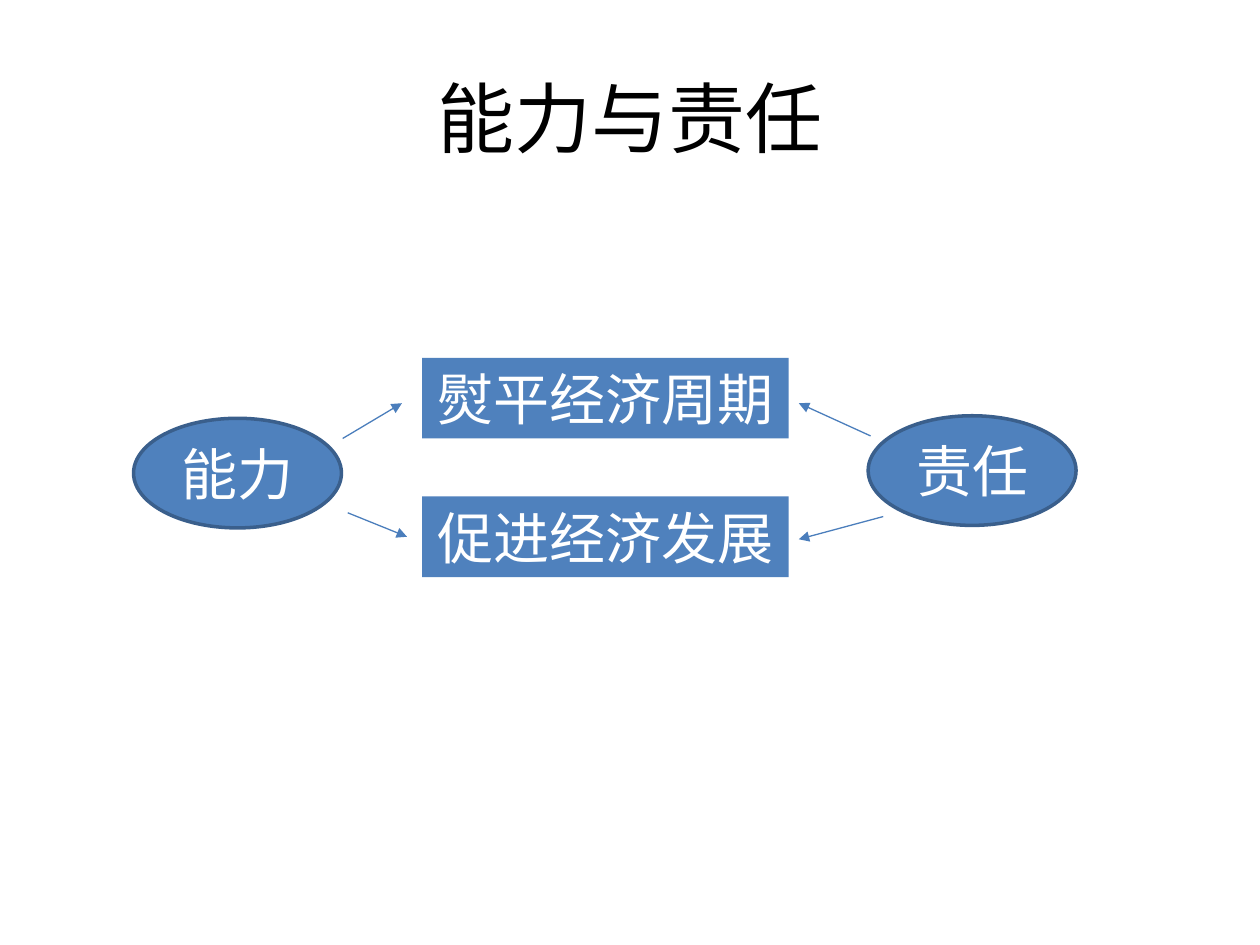
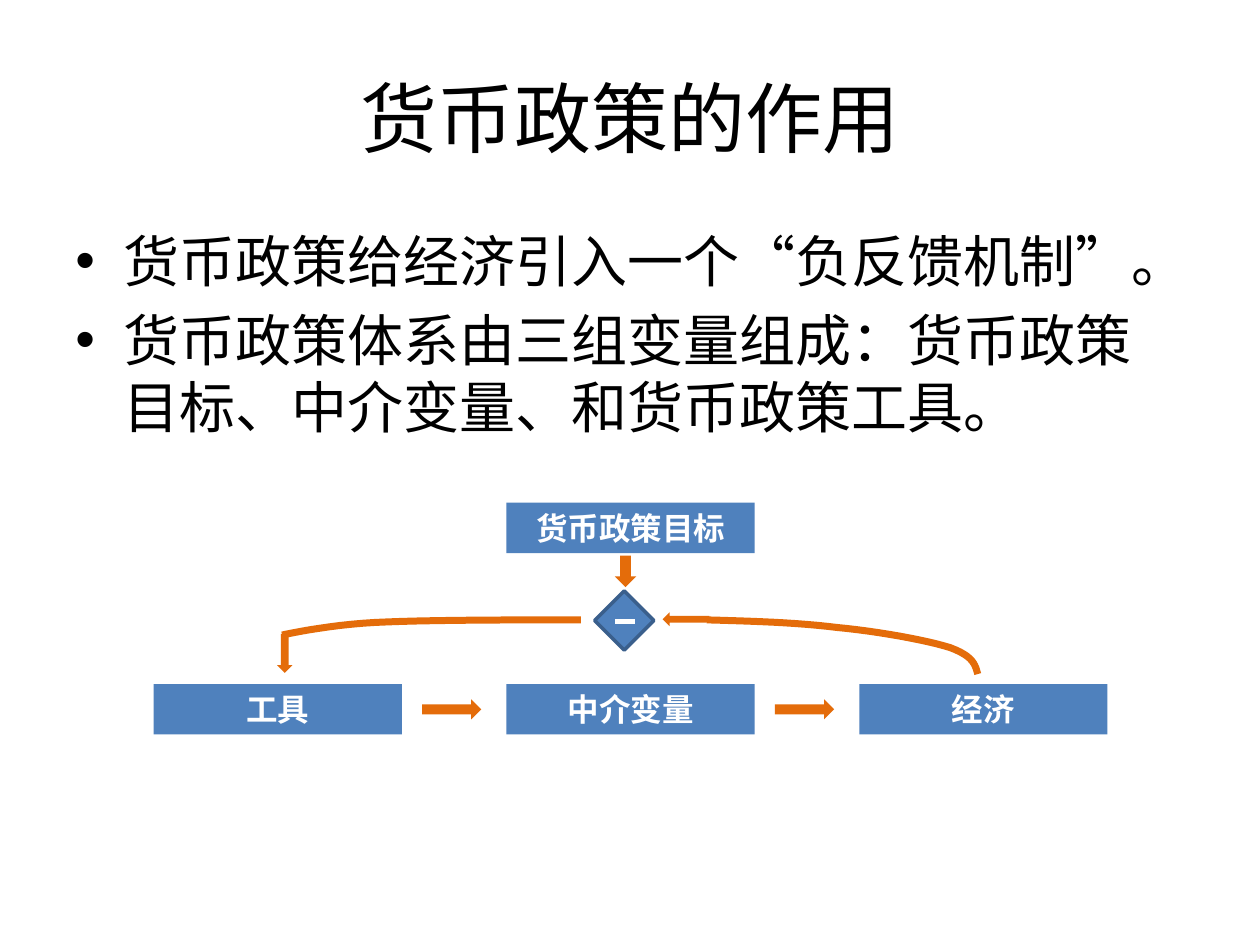
from dataclasses import dataclass

from lxml import etree
from pptx import Presentation
from pptx import util as u
from pptx.dml.color import RGBColor
from pptx.enum import lang, shapes, text
from pptx.oxml import ns

SHAPE = shapes.MSO_SHAPE
CENTER = text.PP_ALIGN.CENTER


@dataclass(frozen=True)
class Theme:
    font: str = "Calibri"
    ink: str = "000000"
    paper: str = "FFFFFF"
    blue: str = "4F81BD"
    blue_edge: str = "3A5F8C"
    blue_arrow: str = "4B7EBC"
    orange: str = "E46C0A"
    title: int = 44
    body: int = 32
    label: int = 18
    edge: float = 2
    thin: float = 0.75
    minus: float = 3
    feedback: float = 4


def inches(*values):
    return [u.Inches(value) for value in values]


def bezier(points, steps=12):
    """Points along chained cubic curves: start, then two controls and an end each."""
    track = [points[0]]
    for i in range(0, len(points) - 1, 3):
        a, b, c, d = points[i:i + 4]
        for step in range(1, steps + 1):
            t = step / steps
            s = 1 - t
            track.append(tuple(
                s**3 * a[k] + 3 * s * s * t * b[k] + 3 * s * t * t * c[k] + t**3 * d[k]
                for k in (0, 1)))
    return track


class Deck:
    def __init__(self, theme):
        self.theme = theme
        self.prs = Presentation()
        self.prs.slide_width, self.prs.slide_height = inches(10, 7.5)
        self.slide = None

    def new_slide(self, title):
        self.slide = self.prs.slides.add_slide(self.prs.slide_layouts[5])
        heading = self.slide.shapes.title
        heading.left, heading.top, heading.width, heading.height = inches(0.5, 0.3, 9, 1.25)
        heading.text_frame.vertical_anchor = text.MSO_ANCHOR.MIDDLE
        paragraph = heading.text_frame.paragraphs[0]
        paragraph.alignment = CENTER
        self.add_words(paragraph, title, self.theme.title, self.theme.ink)

    def add_words(self, paragraph, words, size, color, bold=False):
        run = paragraph.add_run()
        run.text = words
        run.font.name = self.theme.font
        run.font.size = u.Pt(size)
        run.font.bold = bold
        run.font.color.rgb = RGBColor.from_string(color)
        run.font.language_id = lang.MSO_LANGUAGE_ID.SIMPLIFIED_CHINESE

    def stroke(self, line, color, width):
        line.color.rgb = RGBColor.from_string(color)
        line.width = u.Pt(width)

    def bullets(self, box, items):
        frame = self.slide.shapes.add_textbox(*inches(*box)).text_frame
        frame.word_wrap = True
        for i, item in enumerate(items):
            paragraph = frame.add_paragraph() if i else frame.paragraphs[0]
            properties = paragraph._p.get_or_add_pPr()
            properties.set("marL", str(u.Inches(0.38)))
            properties.set("indent", str(u.Inches(-0.38)))
            etree.SubElement(properties, ns.qn("a:buFont")).set("typeface", "Arial")
            etree.SubElement(properties, ns.qn("a:buChar")).set("char", "•")
            if i:
                paragraph.space_before = u.Pt(0.2 * self.theme.body)
            self.add_words(paragraph, item, self.theme.body, self.theme.ink)

    def block(self, kind, box, fill, edge=False):
        block = self.slide.shapes.add_shape(kind, *inches(*box))
        block.shadow.inherit = False
        block.fill.solid()
        block.fill.fore_color.rgb = RGBColor.from_string(fill)
        if edge:
            self.stroke(block.line, self.theme.blue_edge, self.theme.edge)
        else:
            block.line.fill.background()
        return block

    def labelled(self, kind, box, words, size, bold=False, edge=False):
        frame = self.block(kind, box, self.theme.blue, edge).text_frame
        frame.word_wrap = False
        frame.vertical_anchor = text.MSO_ANCHOR.MIDDLE
        frame.paragraphs[0].alignment = CENTER
        self.add_words(frame.paragraphs[0], words, size, self.theme.paper, bold)

    def line(self, start, end, color, width, arrow=False):
        line = self.slide.shapes.add_connector(
            shapes.MSO_CONNECTOR.STRAIGHT, *inches(*start, *end))
        self.stroke(line.line, color, width)
        if arrow:
            etree.SubElement(line.line._get_or_add_ln(), ns.qn("a:tailEnd")).set("type", "triangle")
        etree.SubElement(line._element.spPr, ns.qn("a:effectLst"))

    def curve(self, points, color, width):
        track = [inches(*point) for point in bezier(points)]
        builder = self.slide.shapes.build_freeform(*track[0])
        builder.add_line_segments(track[1:], close=False)
        curve = builder.convert_to_shape()
        curve.shadow.inherit = False
        curve.fill.background()
        self.stroke(curve.line, color, width)


def ability_and_duty(deck):
    theme = deck.theme
    deck.new_slide("能力与责任")

    # Two goals in the middle
    for i, goal in enumerate(["熨平经济周期", "促进经济发展"]):
        deck.labelled(SHAPE.RECTANGLE, (3.35, 2.84 + 1.1 * i, 2.91, 0.64), goal, theme.body)

    # Ability and duty at the sides
    for left, top, side in [(1.06, 3.32, "能力"), (6.89, 3.3, "责任")]:
        deck.labelled(SHAPE.OVAL, (left, top, 1.65, 0.87), side, theme.body, edge=True)

    # Arrows from the sides to the goals
    for start, end in [((2.72, 3.48), (3.19, 3.2)), ((2.76, 4.07), (3.23, 4.26)),
                       ((6.91, 3.46), (6.34, 3.2)), ((7.01, 4.1), (6.34, 4.28))]:
        deck.line(start, end, theme.blue_arrow, theme.thin, arrow=True)


def role_of_policy(deck):
    theme = deck.theme
    deck.new_slide("货币政策的作用")
    deck.bullets((0.5, 1.75, 9, 1.86), [
        "货币政策给经济引入一个“负反馈机制”。",
        "货币政策体系由三组变量组成：货币政策目标、中介变量、和货币政策工具。",
    ])

    # Policy target above a row of three stages
    first, step, stage_top = 1.22, 2.8, 5.43
    stages = [(first + step * i, stage_top, name)
              for i, name in enumerate(["工具", "中介变量", "经济"])]
    for left, top, name in stages + [(first + step, 3.99, "货币政策目标")]:
        deck.labelled(SHAPE.RECTANGLE, (left, top, 1.97, 0.4), name, theme.label, bold=True)

    # Comparison node with its minus sign
    deck.block(SHAPE.DIAMOND, (4.72, 4.69, 0.47, 0.47), theme.blue, edge=True)
    deck.line((4.88, 4.93), (5.04, 4.93), theme.paper, theme.minus)

    # Arrows between stages and from the target
    for i in range(2):
        deck.block(SHAPE.RIGHT_ARROW, (3.35 + step * i, 5.55, 0.47, 0.16), theme.orange)
    deck.block(SHAPE.DOWN_ARROW, (4.88, 4.41, 0.17, 0.25), theme.orange)

    # Feedback from the economy to the node, and on to the tools
    deck.curve([(5.61, 4.92), (5.96, 4.93), (6.32, 4.94), (6.64, 4.98),
                (6.96, 5.01), (7.35, 5.08), (7.54, 5.14),
                (7.73, 5.21), (7.74, 5.28), (7.76, 5.35)], theme.orange, theme.feedback)
    deck.block(SHAPE.LEFT_ARROW, (5.26, 4.86, 0.37, 0.11), theme.orange)
    deck.curve([(4.61, 4.92), (3.99, 4.92), (3.38, 4.92), (2.98, 4.94),
                (2.59, 4.96), (2.24, 5.04), (2.24, 5.04)], theme.orange, theme.feedback)
    deck.block(SHAPE.DOWN_ARROW, (2.2, 5.03, 0.12, 0.31), theme.orange)


def main():
    deck = Deck(Theme())
    ability_and_duty(deck)
    role_of_policy(deck)
    deck.prs.save("out.pptx")


if __name__ == "__main__":
    main()
